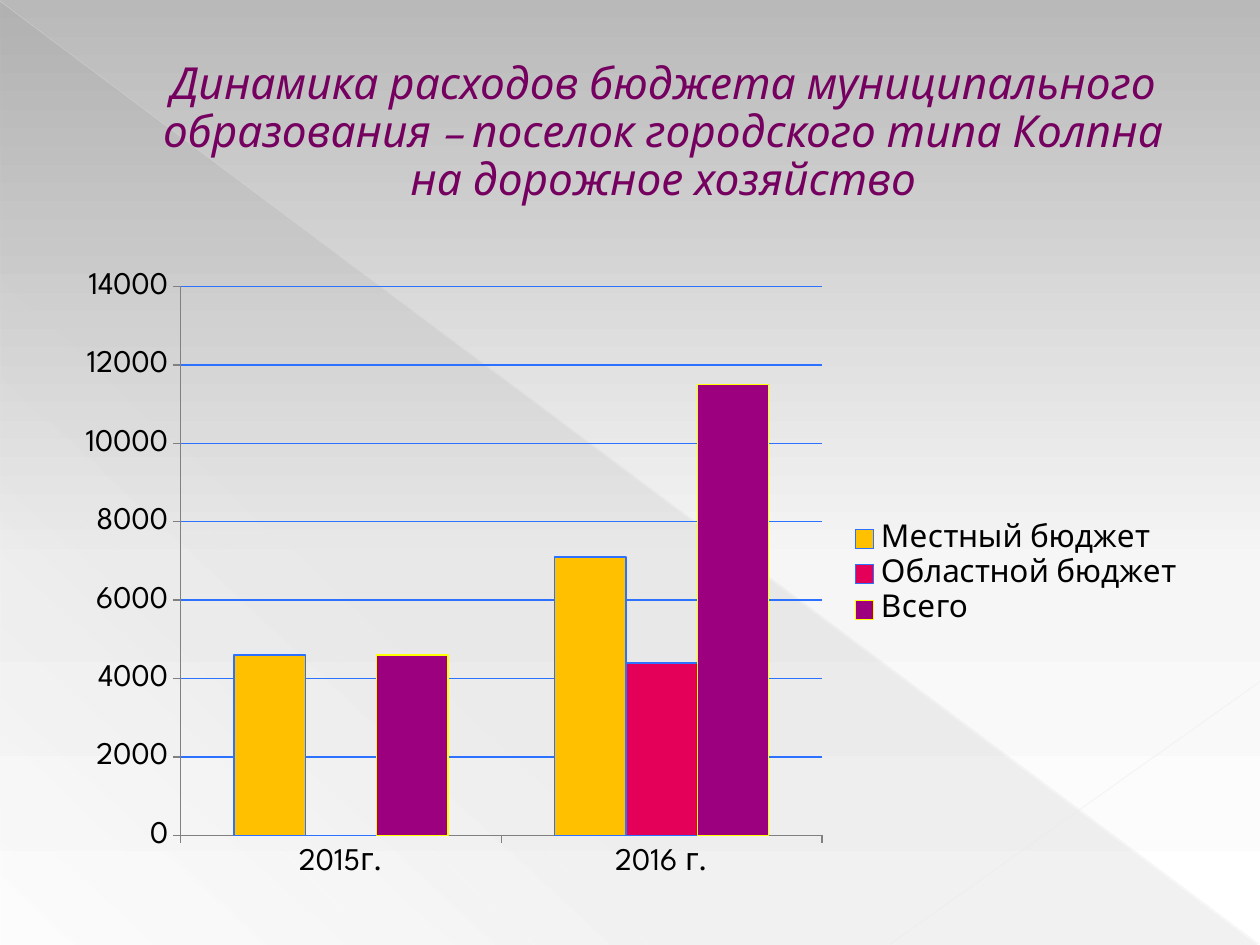
import lxml.etree
import pptx
import pptx.chart.data
import pptx.dml.color
import pptx.enum.chart
import pptx.enum.shapes
import pptx.enum.text
import pptx.oxml
import pptx.oxml.ns
import pptx.util

Cm = pptx.util.Cm
Pt = pptx.util.Pt
NAMESPACE = pptx.oxml.ns.nsdecls("a")
COLORS = {
    "sky": "B9B9B9", "mist": "F6F6F6", "white": "FFFFFF",
    "shade": "666666", "diagonal": "E8E8E8", "corner": "EAEAEA",
    "title": "75005F", "title_edge": "B12761", "text": "000000",
    "axis": "808080", "blue": "2C71FF", "gold": "FFC000",
    "crimson": "E40059", "purple": "9C007F", "yellow": "FFFF00",
}


def rgb(name):
    return pptx.dml.color.RGBColor.from_string(COLORS[name])


def color_xml(name, opacity=100):
    return (f'<a:srgbClr val="{COLORS[name]}">'
            f'<a:alpha val="{opacity * 1000}"/></a:srgbClr>')


def gradient(stops, angle):
    """Return a linear gradient; stops are (position, color, opacity) in percent."""
    items = "".join(f'<a:gs pos="{position * 1000}">{color_xml(name, opacity)}</a:gs>'
                    for position, name, opacity in stops)
    return pptx.oxml.parse_xml(
        f'<a:gradFill {NAMESPACE} rotWithShape="1"><a:gsLst>{items}</a:gsLst>'
        f'<a:lin ang="{angle * 60000}" scaled="0"/></a:gradFill>')


def format_text(font, size, color, name="League Spartan", italic=False):
    font.size = Pt(size)
    font.name = name
    font.italic = italic
    font.color.rgb = rgb(color)


def format_line(line, color, width=0.75):
    line.color.rgb = rgb(color)
    line.width = Pt(width)


class SlideBuilder:
    """Holds the text style and the slide that receives the elements."""

    def __init__(self, slide, title_size=25.2, chart_size=18):
        self.slide = slide
        self.title_size = title_size
        self.chart_size = chart_size

    def background(self, stops, angle):
        fill = self.slide.background.fill
        fill.solid()
        properties = self.slide.element.find(".//" + pptx.oxml.ns.qn("p:bgPr"))
        properties.replace(properties[0], gradient(stops, angle))

    def triangle(self, left, top, width, height, stops, angle):
        shape = self.slide.shapes.add_shape(
            pptx.enum.shapes.MSO_SHAPE.RIGHT_TRIANGLE,
            Cm(left), Cm(top), Cm(width), Cm(height))
        shape.shadow.inherit = False
        shape.line.fill.background()
        shape.fill.solid()
        properties = shape.element.spPr
        solid = properties.find(pptx.oxml.ns.qn("a:solidFill"))
        properties.replace(solid, gradient(stops, angle))

    def line(self, start, end, color, width, opacity):
        connector = self.slide.shapes.add_connector(
            pptx.enum.shapes.MSO_CONNECTOR.STRAIGHT,
            *[Cm(value) for value in start + end])
        format_line(connector.line, color, width)
        properties = connector.element.spPr
        solid = properties.find(".//" + pptx.oxml.ns.qn("a:solidFill"))
        solid.replace(solid[0], pptx.oxml.parse_xml(
            color_xml(color, opacity).replace("<a:srgbClr", f"<a:srgbClr {NAMESPACE}", 1)))
        lxml.etree.SubElement(properties, pptx.oxml.ns.qn("a:effectLst"))

    def title(self, text, left, top, width, height, indent):
        shape = self.slide.shapes.add_textbox(Cm(left), Cm(top), Cm(width), Cm(height))
        frame = shape.text_frame
        frame.word_wrap = True
        frame.vertical_anchor = pptx.enum.text.MSO_ANCHOR.MIDDLE
        paragraph = frame.paragraphs[0]
        paragraph.alignment = pptx.enum.text.PP_ALIGN.CENTER
        paragraph.line_spacing = 0.9
        paragraph._p.get_or_add_pPr().set("marL", str(Cm(indent)))
        run = paragraph.add_run()
        run.text = text
        format_text(run.font, self.title_size, "title", italic=True)
        run.font._element.insert(0, pptx.oxml.parse_xml(
            f'<a:ln {NAMESPACE} w="{Pt(0.5)}"><a:solidFill>'
            f'{color_xml("title_edge")}</a:solidFill></a:ln>'))

    def column_chart(self, left, top, width, height, categories, series_list):
        """Add clustered columns; series are (name, values, fill, edge)."""
        data = pptx.chart.data.CategoryChartData()
        data.categories = categories
        for name, values, _, _ in series_list:
            data.add_series(name, values)
        chart = self.slide.shapes.add_chart(
            pptx.enum.chart.XL_CHART_TYPE.COLUMN_CLUSTERED,
            Cm(left), Cm(top), Cm(width), Cm(height), data).chart
        format_text(chart.font, self.chart_size, "text")
        chart.has_title = False
        chart.has_legend = True
        chart.legend.position = pptx.enum.chart.XL_LEGEND_POSITION.RIGHT
        chart.legend.include_in_layout = False
        for axis in (chart.category_axis, chart.value_axis):
            axis.major_tick_mark = pptx.enum.chart.XL_TICK_MARK.OUTSIDE
            axis.minor_tick_mark = pptx.enum.chart.XL_TICK_MARK.NONE
            format_line(axis.format.line, "axis")
        chart.value_axis.minimum_scale = 0
        chart.value_axis.maximum_scale = 14000
        chart.value_axis.major_unit = 2000
        chart.value_axis.has_major_gridlines = True
        format_line(chart.value_axis.major_gridlines.format.line, "blue")
        plot = chart.plots[0]
        plot.gap_width = 150
        plot.overlap = 0
        plot.vary_by_categories = False
        for series, (_, _, fill, edge) in zip(plot.series, series_list):
            series.format.fill.solid()
            series.format.fill.fore_color.rgb = rgb(fill)
            format_line(series.format.line, edge)


def main():
    presentation = pptx.Presentation()
    presentation.slide_width = Cm(25.4)
    presentation.slide_height = Cm(19.05)
    builder = SlideBuilder(presentation.slides.add_slide(presentation.slide_layouts[6]))

    builder.background([(0, "sky", 100), (60, "mist", 100), (100, "white", 100)], 90)
    builder.triangle(0.02, 0.04, 25.35, 19,
                     [(0, "shade", 10), (70, "shade", 8), (100, "shade", 1)], 133)
    builder.line((0, 0.02), (25.38, 19.03), "diagonal", 0.39, 35)
    builder.line((25.4, 13.74), (17.95, 19.03), "corner", 0.47, 45)
    builder.title("Динамика расходов бюджета муниципального образования – "
                  "поселок городского типа Колпна на дорожное хозяйство",
                  1.27, 0.74, 22.86, 3.89, indent=1.35)
    builder.column_chart(1.27, 5.23, 22.86, 12.7, ["2015г.", "2016 г."], [
        ("Местный бюджет", (4600, 7100), "gold", "blue"),
        ("Областной бюджет", (0, 4400), "crimson", "blue"),
        ("Всего", (4600, 11500), "purple", "yellow"),
    ])
    presentation.save("out.pptx")


if __name__ == "__main__":
    main()
